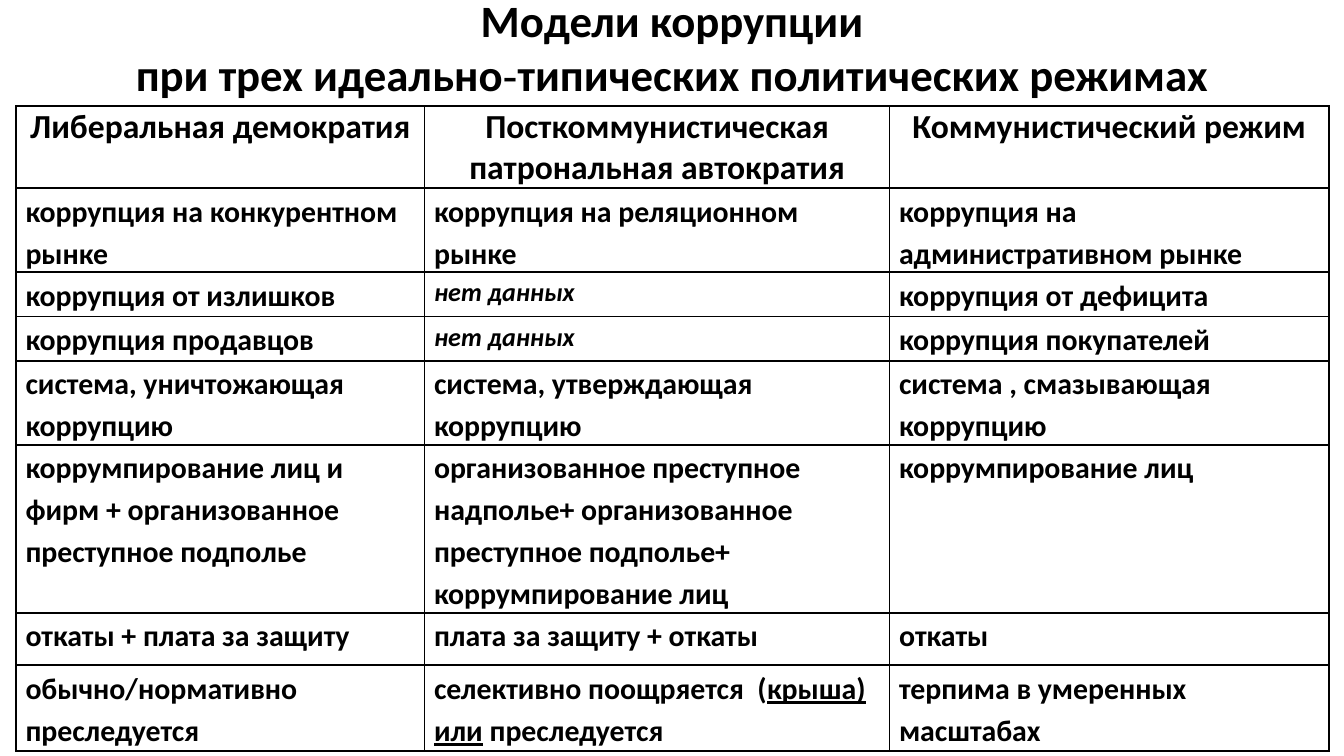
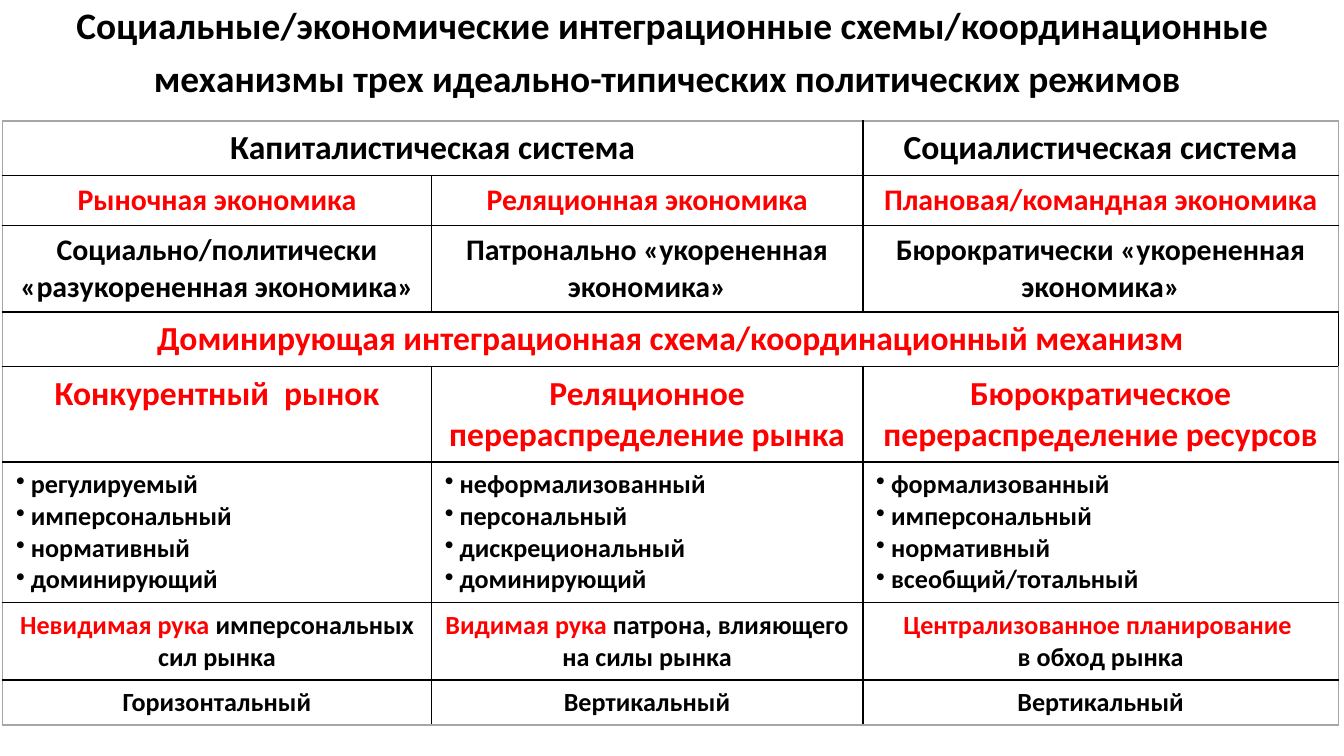
from lxml.etree import SubElement
from pptx import Presentation
from pptx.dml.color import RGBColor
from pptx.enum.text import MSO_ANCHOR, MSO_AUTO_SIZE, PP_ALIGN
from pptx.oxml import parse_xml
from pptx.oxml.ns import nsdecls, qn
from pptx.util import Inches, Pt

BLACK, RED, GREY = "000000", "FF0000", "A6A6A6"
FONT = "Calibri"


def color(code):
    return RGBColor.from_string(code)


class Deck:
    """Builds slides, with lengths in percent of the slide's size."""

    def __init__(self):
        self.prs = Presentation()
        self.prs.slide_width = Inches(10)
        self.prs.slide_height = Inches(5.625)
        self.slide = None

    def wide(self, share):
        return round(self.prs.slide_width * share / 100)

    def high(self, share):
        return round(self.prs.slide_height * share / 100)

    def box(self, left, top, width, height):
        return self.wide(left), self.high(top), self.wide(width), self.high(height)

    def run(self, para, text, size, tint=BLACK, italic=False, under=False):
        run = para.add_run()
        run.text = text
        font = run.font
        font.name, font.size, font.bold = FONT, Pt(size), True
        font.italic, font.underline = italic, under
        font.color.rgb = color(tint)

    def title(self, place, lines, size, tail=None, base=0.05):
        self.slide = self.prs.slides.add_slide(self.prs.slide_layouts[5])
        shape = self.slide.shapes.title
        shape.left, shape.top, shape.width, shape.height = self.box(*place)
        frame = shape.text_frame
        frame.word_wrap = True
        frame.auto_size = MSO_AUTO_SIZE.NONE
        frame.vertical_anchor = MSO_ANCHOR.MIDDLE
        frame.margin_bottom = Inches(base)
        para = frame.paragraphs[0]
        para.alignment = PP_ALIGN.CENTER
        for num, line in enumerate(lines):
            if num:
                para.add_line_break()
            self.run(para, line, size)
        if tail:
            self.run(para, " ", tail)

    def border(self, cell, edges):
        props = cell._tc.get_or_add_tcPr()
        for spot, (side, tint) in enumerate(zip("LRTB", edges)):
            line = parse_xml(
                f'<a:ln{side} {nsdecls("a")} w="12700"><a:solidFill>'
                f'<a:srgbClr val="{tint}"/></a:solidFill></a:ln{side}>')
            props.insert(spot, line)

    def bullet(self, para):
        props = para._p.get_or_add_pPr()
        gap = Inches(0.11)
        props.set("marL", str(gap))
        props.set("indent", str(-gap))
        SubElement(props, qn("a:buChar")).set("char", "•")

    def fill(self, cell, paras, look):
        frame = cell.text_frame
        for num, runs in enumerate(paras):
            para = frame.add_paragraph() if num else frame.paragraphs[0]
            para.alignment = look.get("align", PP_ALIGN.CENTER)
            if "space" in look:
                para.line_spacing = look["space"]
            if look.get("dots"):
                self.bullet(para)
            for text, more in runs:
                style = {"size": look["size"], "tint": look.get("tint", BLACK)}
                self.run(para, text, **{**style, **more})

    def table(self, place, cols, rows, data, pads=None, rim=BLACK):
        frame = self.slide.shapes.add_table(len(rows), len(cols), *self.box(*place))
        table = frame.table
        table.first_row = table.horz_banding = False
        for col, share in zip(table.columns, cols):
            col.width = self.wide(share)
        for row, share in zip(table.rows, rows):
            row.height = self.high(share)
        frame.height = self.high(place[3])
        end, base = len(cols) - 1, len(rows) - 1
        for r, (look, cells) in enumerate(data):
            for c, item in enumerate(cells):
                cell = table.cell(r, c)
                cell.fill.background()
                outer = (c == 0, c == end, r == 0, r == base)
                self.border(cell, [rim if out else BLACK for out in outer])
                if pads:
                    cell.margin_left = cell.margin_right = Inches(pads[0])
                    cell.margin_top = cell.margin_bottom = Inches(pads[1])
                if item is not None:
                    self.fill(cell, parts(item), look)
            if None in cells:
                table.cell(r, 0).merge(table.cell(r, len(cells) - 1 - cells[::-1].index(None)))


def parts(item):
    """Turns a plain text or a list of paragraphs into lists of runs."""
    paras = [item] if isinstance(item, str) else item
    return [[(para, {})] if isinstance(para, str) else para for para in paras]


def models(deck):
    deck.title((5, 2.84, 90, 13.69),
               ["Модели коррупции",
                "при трех идеально˗типических политических режимах"], 24, base=0.45)
    head = {"size": 18}
    text = {"size": 16, "align": PP_ALIGN.LEFT, "space": 1.15}
    blank = [[("нет данных", {"size": 14, "italic": True})]]
    roof = [[("селективно поощряется  (", {}), ("крыша) или", {"under": True}),
             (" преследуется", {})]]
    data = [
        (head, ["Либеральная демократия",
                "Посткоммунистическая патрональная автократия",
                "Коммунистический режим"]),
        (text, ["коррупция на конкурентном рынке",
                "коррупция на реляционном рынке",
                "коррупция на aдминистративном рынке"]),
        (text, ["коррупция от излишков", blank, "коррупция от дефицита"]),
        (text, ["коррупция продавцов", blank, "коррупция покупателей"]),
        (text, ["система, уничтожающая коррупцию",
                "система, утверждающая коррупцию",
                "система , смазывающая коррупцию"]),
        (text, ["коррумпирование лиц и фирм + организованное преступное подполье",
                "oрганизованное преступное  надполье+ организованное "
                "преступное подполье+ коррумпирование лиц",
                "коррумпирование лиц"]),
        (text, ["откаты + плата за защиту", "плата за защиту + откаты", "откаты"]),
        (text, ["обычно/нормативно преследуется", roof,
                "терпима в умеренных масштабах"]),
    ]
    deck.table((1.2, 14.04, 97.6, 84.98), [30.4, 34.6, 32.7],
               [9.78, 11.02, 5.87, 5.87, 11.02, 22.22, 6.93, 11.38],
               data, pads=(0.07, 0))


def schemes(deck):
    deck.title((2.8, 0, 94.5, 13.69),
               ["Социальные/экономические интеграционные схемы/координационные "
                "механизмы трех идеально-типических политических режимов"], 20, tail=24)
    red = {"tint": RED}
    head, plain, small = {"size": 18}, {"size": 16}, {"size": 14}
    dots = {"size": 14, "align": PP_ALIGN.LEFT, "dots": True}
    data = [
        (head, ["Капиталистическая система", None, "Социалистическая систeма"]),
        ({**plain, **red}, ["Рыночная экономика", "Реляционная экономика",
                            "Плановая/командная эконoмика"]),
        (plain, ["Социально/политически «разукорененная экономика»",
                 "Патронально «укорененная экономика»",
                 "Бюрократически «укорененная экономика»"]),
        ({**head, **red}, ["Доминирующая интеграционная схема/координационный механизм",
                           None, None]),
        ({**head, **red}, ["Конкурентный  рынок",
                           "Реляционное перераспределение рынка",
                           "Бюрократическое перераспределение ресурсов"]),
        (dots, [["рeгулируемый", "имперсональный", "нормативный", "доминирующий"],
                ["неформализованный", "персональный", "дискрециональный",
                 "доминирующий"],
                ["формализованный", "имперсональный", "нормативный",
                 "всеобщий/тотальный"]]),
        (small, [[[("Невидимая рука ", red), ("имперсональных сил рынка", {})]],
                 [[("Видимая рука ", red), ("патрона, влияющего на силы рынка", {})]],
                 [[("Централизованное планирование ", red)], "в обход рынка"]]),
        (small, ["Горизонтальный", "Вертикальный", "Вертикальный"]),
    ]
    deck.table((0.2, 16, 99.4, 78.76), [31.9, 32.1, 35.4],
               [5.51, 5.33, 10.67, 6.4, 8.53, 18.13, 5.16, 4.62], data, rim=GREY)


def main():
    deck = Deck()
    models(deck)
    schemes(deck)
    deck.prs.save("out.pptx")


if __name__ == "__main__":
    main()
